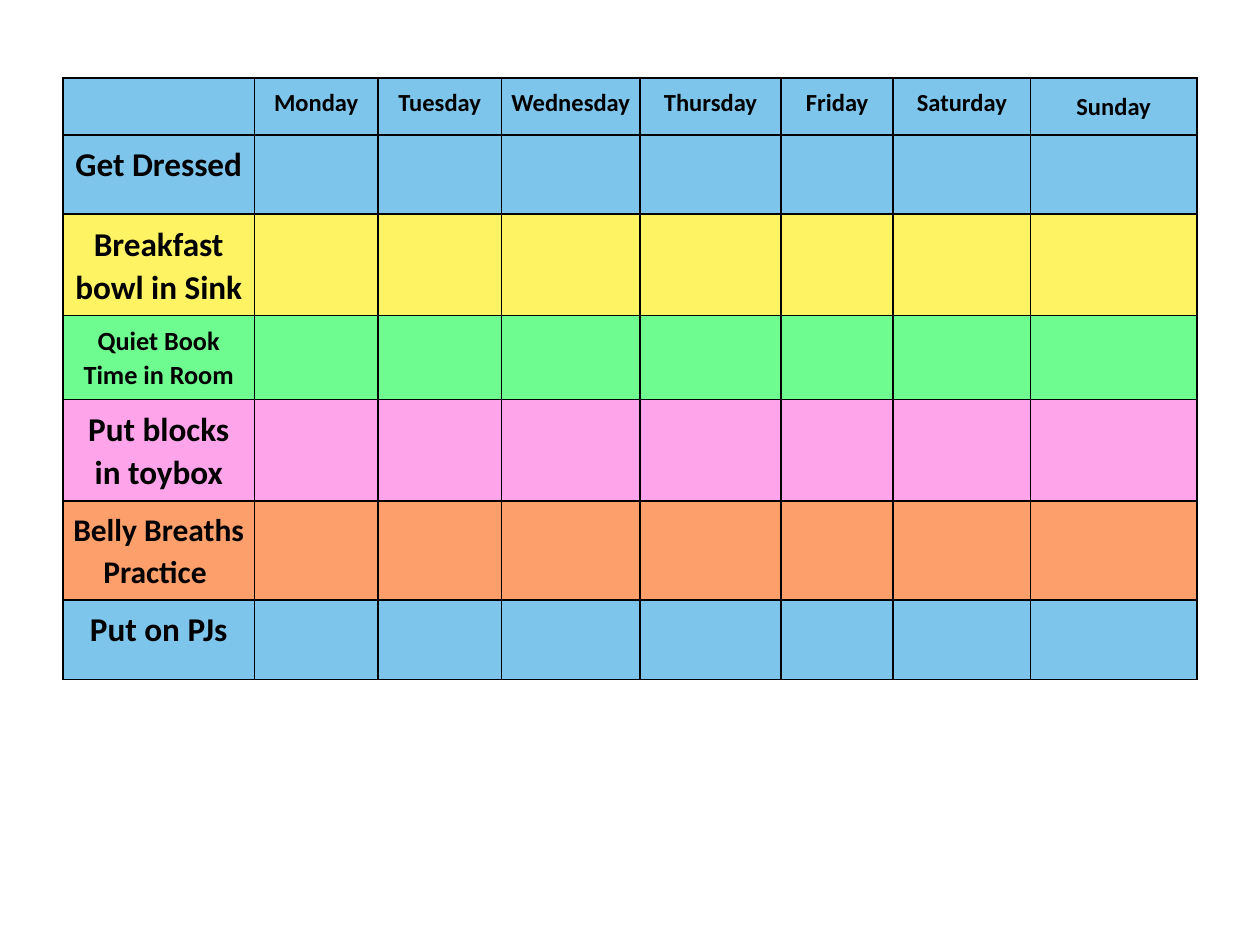
from lxml.etree import SubElement
from pptx import Presentation
from pptx.dml.color import RGBColor as RGB
from pptx.enum.text import MSO_ANCHOR as ANCHOR, PP_ALIGN as ALIGN
from pptx.oxml import parse_xml
from pptx.oxml.ns import nsdecls, qn
from pptx.util import Inches, Pt

COLORS = {"blue": "7EC5EC", "yellow": "FEF362", "green": "6EFC90",
          "pink": "FEA4EB", "orange": "FD9F6B", "black": "000000"}
DAYS = [("Monday", 0.98), ("Tuesday", 0.98), ("Wednesday", 1.1),
        ("Thursday", 1.12), ("Friday", 0.89), ("Saturday", 1.09),
        ("Sunday", 1.32)]
TASKS = [
    ([("Get Dressed", 19)], "blue", 0.63),
    ([("Breakfast bowl in Sink", 19)], "yellow", 0.8),
    ([("Quiet Book Time in Room", 15)], "green", 0.66),
    ([("Put blocks in toybox", 19)], "pink", 0.79),
    ([("Belly Breaths Practice", 18), (" ", 19)], "orange", 0.78),
    ([("Put on PJs", 19)], "blue", 0.63),
]
LABEL_WIDTH, HEADER_HEIGHT = 1.52, 0.45


def style_cell(cell, color):
    cell.fill.solid()
    cell.fill.fore_color.rgb = RGB.from_string(COLORS[color])
    cell.margin_left = cell.margin_right = Pt(5.4)
    cell.margin_top = cell.margin_bottom = Inches(0.06)
    tcPr = cell.fill._xPr
    for i, side in enumerate(("lnL", "lnR", "lnT", "lnB")):
        ln = parse_xml(f'<a:{side} {nsdecls("a")} w="{Pt(1)}"/>')
        fill = SubElement(ln, qn("a:solidFill"))
        SubElement(fill, qn("a:srgbClr"), val=COLORS["black"])
        tcPr.insert(i, ln)


def write_cell(cell, runs):
    p = cell.text_frame.paragraphs[0]
    p.alignment = ALIGN.CENTER
    p.line_spacing = 1.07
    for text, size in runs:
        r = p.add_run()
        r.text = text
        r.font.name = "Calibri"
        r.font.size = Pt(size)
        r.font.bold = True
        r.font.color.rgb = RGB.from_string(COLORS["black"])


prs = Presentation()
prs.slide_width, prs.slide_height = Inches(10), Inches(7.5)
s = prs.slides.add_slide(prs.slide_layouts[6])

widths = [LABEL_WIDTH] + [width for _, width in DAYS]
heights = [HEADER_HEIGHT] + [height for _, _, height in TASKS]
row_colors = ["blue"] + [color for _, color, _ in TASKS]
table = s.shapes.add_table(len(heights), len(widths), Inches(0.5), Inches(0.62),
                           Inches(sum(widths)), Inches(sum(heights))).table

for column, width in zip(table.columns, widths):
    column.width = Inches(width)
for row, height, color in zip(table.rows, heights, row_colors):
    row.height = Inches(height)
    for cell in row.cells:
        style_cell(cell, color)

for col, (day, _) in enumerate(DAYS, 1):
    write_cell(table.cell(0, col), [(day, 14)])
for row, (runs, _, _) in enumerate(TASKS, 1):
    write_cell(table.cell(row, 0), runs)
table.cell(0, len(DAYS)).vertical_anchor = ANCHOR.MIDDLE

prs.save("out.pptx")
